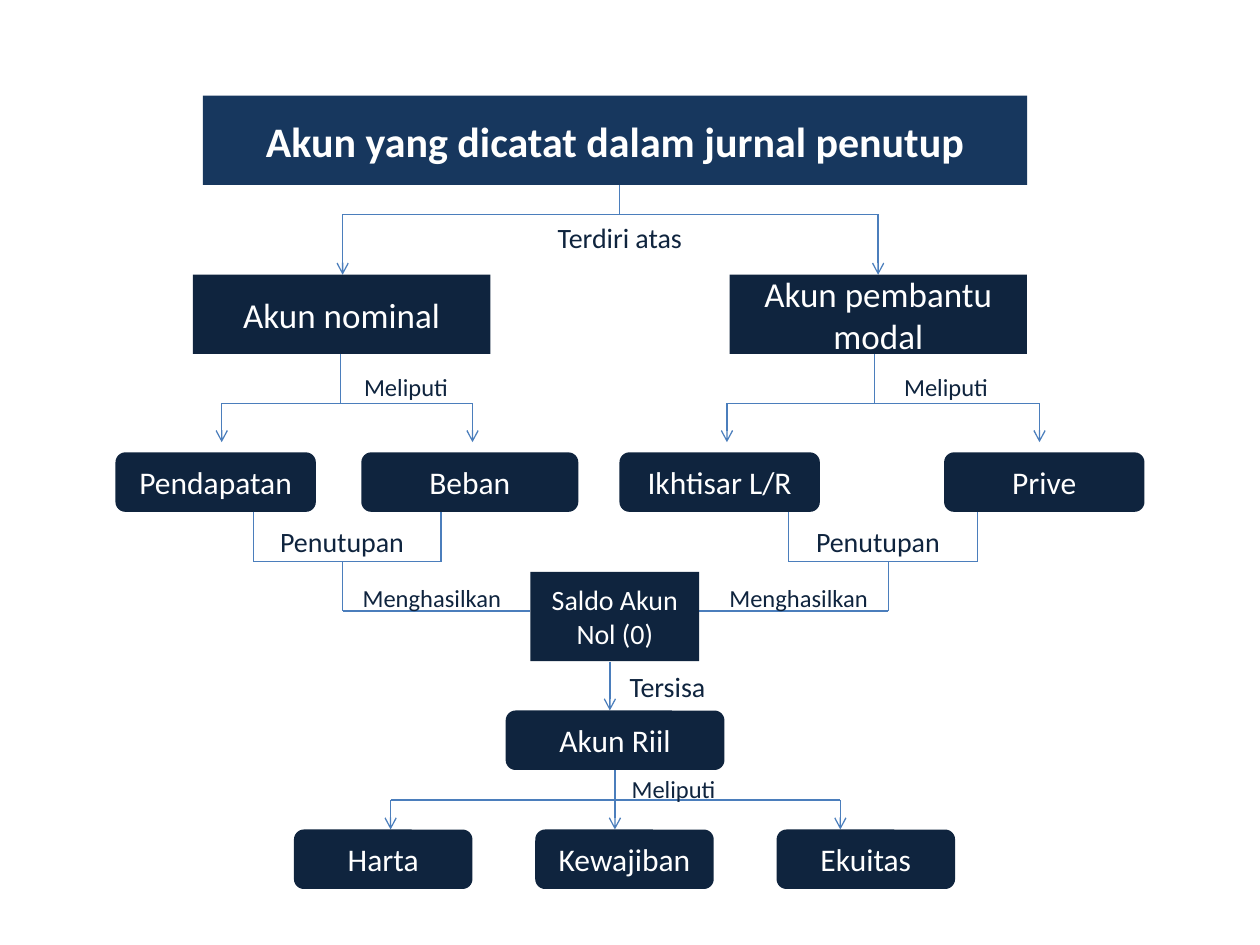
from lxml.etree import SubElement as Sub
from pptx import Presentation
from pptx.dml.color import RGBColor as RGB
from pptx.enum.shapes import MSO_CONNECTOR as Link, MSO_SHAPE as Form
from pptx.enum.text import MSO_ANCHOR as Anchor, MSO_AUTO_SIZE as Auto, PP_ALIGN as Align
from pptx.oxml.ns import qn
from pptx.util import Pt

COLORS = {"title": "17375E", "box": "0F243E", "line": "4B7EBC", "white": "FFFFFF"}


class Chart:
    """Holds the style and the slide; all lengths are in points."""

    font = "Calibri"

    def __init__(self, slide):
        self.slide = slide
        self.shapes = slide.shapes

    def color(self, name):
        return RGB.from_string(COLORS[name])

    def words(self, shape, text, size, color, bold=False):
        frame = shape.text_frame
        frame.text = text
        frame.word_wrap = True
        frame.auto_size = Auto.NONE
        frame.vertical_anchor = Anchor.MIDDLE
        for para in frame.paragraphs:
            para.alignment = Align.CENTER
            font = para.font
            font.name, font.size, font.bold = self.font, Pt(size), bold
            font.color.rgb = self.color(color)

    def paint(self, shape, color):
        shape.fill.solid()
        shape.fill.fore_color.rgb = self.color(color)

    def title(self, text, x, y, w, h):
        shape = self.shapes.title
        shape.left, shape.top, shape.width, shape.height = map(Pt, (x, y, w, h))
        self.paint(shape, "title")
        self.words(shape, text, 24, "white", True)

    def box(self, text, x, y, w, h, size=18, form=Form.ROUNDED_RECTANGLE):
        shape = self.shapes.add_shape(form, *map(Pt, (x, y, w, h)))
        shape.shadow.inherit = False
        self.paint(shape, "box")
        shape.line.fill.background()
        self.words(shape, text, size, "white")

    def label(self, text, x, y, size=14):
        """Place a label by its centre."""
        w, h = 104, 18
        shape = self.shapes.add_textbox(*map(Pt, (x - w / 2, y - h / 2, w, h)))
        frame = shape.text_frame
        frame.margin_left = frame.margin_right = 0
        frame.margin_top = frame.margin_bottom = 0
        self.words(shape, text, size, "box")

    def line(self, x1, y1, x2, y2, arrow=False):
        link = self.shapes.add_connector(Link.STRAIGHT, *map(Pt, (x1, y1, x2, y2)))
        link.line.color.rgb = self.color("line")
        link.line.width = Pt(0.75)
        props = link.element.spPr
        if arrow:
            Sub(props.find(qn("a:ln")), qn("a:tailEnd"), type="arrow")
        Sub(props, qn("a:effectLst"))

    def split(self, x, top, mid, end, drops):
        """Draw a stem that branches into arrows."""
        self.line(x, top, x, mid)
        self.line(drops[0], mid, drops[-1], mid)
        for drop in drops:
            self.line(drop, mid, drop, end, True)

    def merge(self, left, right, stem, edge):
        """Join two legs and lead them to the side of the balance box."""
        top, mid, end = 292.3, 321, 349.2
        for leg in (left, right):
            self.line(leg, top, leg, mid)
        self.line(left, mid, right, mid)
        self.line(stem, mid, stem, end)
        self.line(stem, end, edge, end)


def main():
    deck = Presentation()
    deck.slide_width, deck.slide_height = Pt(720), Pt(540)
    chart = Chart(deck.slides.add_slide(deck.slide_layouts[5]))

    # Connectors
    chart.split(354.2, 105.8, 122.4, 157, (195.8, 501.8))
    chart.split(194.4, 202.3, 230.4, 252.7, (126.7, 270))
    chart.split(499.7, 202.3, 230.4, 252.7, (415.4, 594))
    chart.merge(144.7, 252, 195.8, 303.1)
    chart.merge(450.7, 558.7, 507.6, 399.6)
    chart.line(348.5, 378, 348.5, 406, True)
    chart.split(351.4, 440, 457.2, 474, (223.2, 351.4, 480.2))

    # Title and the two account groups
    chart.title("Akun yang dicatat dalam jurnal penutup", 116, 54.7, 471, 51)
    for text, x in (("Akun nominal", 110.2), ("Akun pembantu modal", 416.9)):
        chart.box(text, x, 157, 170, 45.3, 20, Form.RECTANGLE)

    # Accounts of each group
    for text, x, w in (("Pendapatan", 66, 114.5), ("Beban", 206.5, 124),
                       ("Ikhtisar L/R", 354, 114.5), ("Prive", 539.5, 114.5)):
        chart.box(text, x, 258.5, w, 34)

    # Balance, real accounts and their kinds
    chart.box("Saldo Akun\nNol (0)", 303.1, 326.8, 96.5, 51, 16, Form.RECTANGLE)
    chart.box("Akun Riil", 289, 406, 125, 34)
    for i, text in enumerate(("Harta", "Kewajiban", "Ekuitas")):
        chart.box(text, 168 + 137.9 * i, 474, 102, 34)

    # Labels
    chart.label("Terdiri atas", 354.2, 135.4, 16)
    for x in (232, 540.6):
        chart.label("Meliputi", x, 221)
    for x in (195.5, 501.7):
        chart.label("Penutupan", x, 309.5, 16)
    for x in (246.8, 456.4):
        chart.label("Menghasilkan", x, 341.3)
    chart.label("Tersisa", 381.4, 392, 16)
    chart.label("Meliputi", 384.9, 450.6)

    deck.save("out.pptx")


if __name__ == "__main__":
    main()
